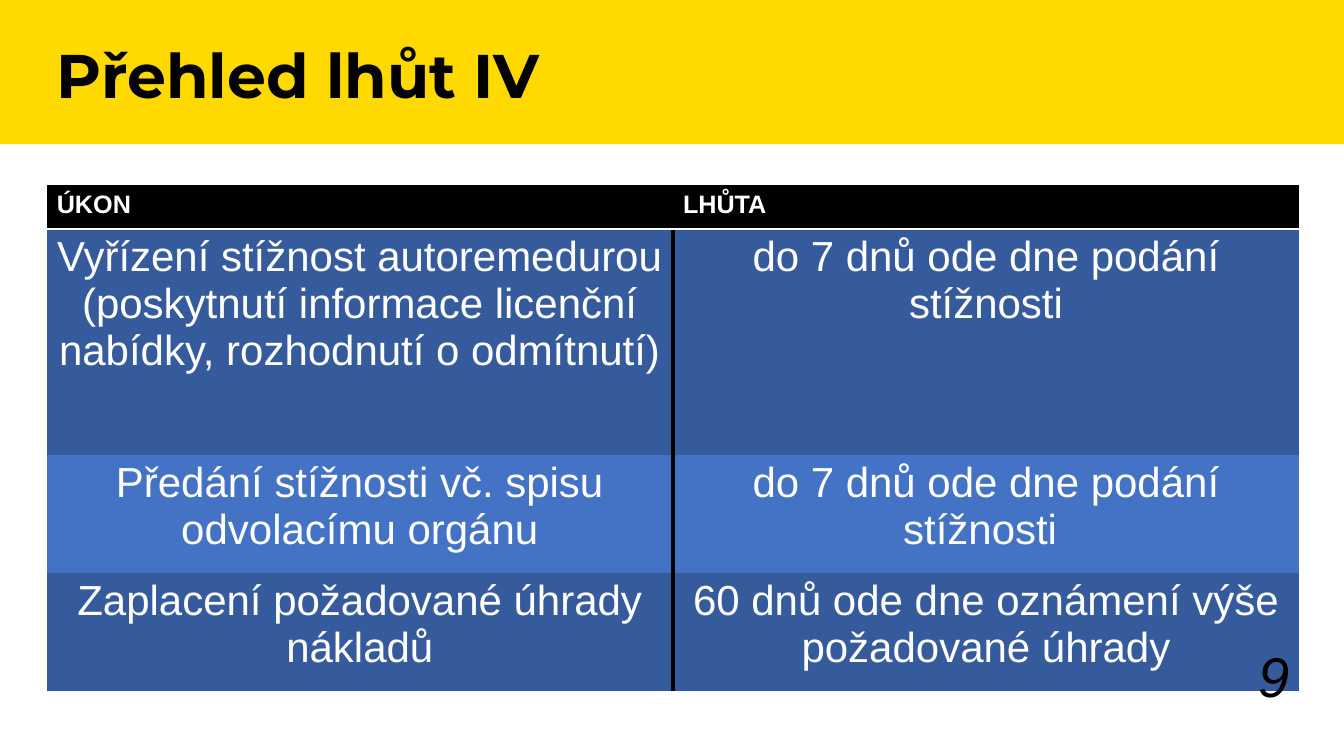
from lxml.etree import SubElement
from pptx import Presentation
from pptx.dml.color import RGBColor
from pptx.enum.shapes import MSO_SHAPE as Shape
from pptx.enum.text import MSO_ANCHOR as Anchor, PP_ALIGN as Align
from pptx.oxml import parse_xml
from pptx.oxml.ns import nsdecls, qn
from pptx.util import Pt

# Content
TITLE = "Přehled lhůt IV"
PAGE = "9"
DEADLINES = [
    ("ÚKON", "LHŮTA"),
    ("Vyřízení stížnost autoremedurou (poskytnutí informace licenční "
     "nabídky, rozhodnutí o odmítnutí)", "do 7 dnů ode dne podání stížnosti"),
    ("Předání stížnosti vč. spisu odvolacímu orgánu",
     "do 7 dnů ode dne podání stížnosti "),
    ("Zaplacení požadované úhrady nákladů",
     "60 dnů ode dne oznámení výše požadované úhrady"),
]

# Look
COLORS = {"band": "FFD900", "black": "000000", "white": "FFFFFF",
          "dark": "365B9D", "light": "4472C4"}
ROW_FILLS = ["black", "dark", "light", "dark"]
ROW_HEIGHTS = [31.2, 161.3, 84.3, 84.3]
NO_STYLE = "{2D5ABB26-0587-4C30-8999-92F81FD0307C}"
WIDTH, HEIGHT = 960, 540
LEFT, TABLE_TOP, TABLE_WIDTH = 33.4, 132.3, 894.6


def rgb(name):
    return RGBColor.from_string(COLORS[name])


def set_font(paragraph, face, size, color, bold=False, italic=False):
    font = paragraph.font
    font.name, font.size = face, Pt(size)
    font.bold, font.italic = bold, italic
    font.color.rgb = rgb(color)


def cell_borders(row, column):
    """Borders in schema order: left, right, bottom."""
    if column and row:
        yield "lnL", "black", 3
    if not column:
        yield "lnR", "black", 3
    if not row:
        yield "lnB", "white", 2


def add_border(cell, side, color, width):
    line = parse_xml(
        f'<a:{side} {nsdecls("a")} w="{Pt(width)}"><a:solidFill>'
        f'<a:srgbClr val="{COLORS[color]}"/></a:solidFill></a:{side}>')
    cell._tc.get_or_add_tcPr().append(line)


deck = Presentation()
deck.slide_width, deck.slide_height = Pt(WIDTH), Pt(HEIGHT)
slide = deck.slides.add_slide(deck.slide_layouts[5])

# Yellow band, behind the title
band = slide.shapes.add_shape(Shape.RECTANGLE, 0, 0, Pt(WIDTH), Pt(103))
band.shadow.inherit = False
band.fill.solid()
band.fill.fore_color.rgb = rgb("band")
band.line.fill.background()
slide.shapes._spTree.insert(2, band._element)

# Title
title = slide.shapes.title
title.left, title.top, title.width, title.height = map(Pt, (LEFT, 28.8, 887, 73.4))
title.text_frame.text = TITLE
title.text_frame.vertical_anchor = Anchor.TOP
heading = title.text_frame.paragraphs[0]
heading.alignment, heading.line_spacing = Align.LEFT, 0.9
set_font(heading, "Montserrat", 44, "black", bold=True)

# Table of deadlines
table = slide.shapes.add_table(
    len(DEADLINES), 2, Pt(LEFT), Pt(TABLE_TOP),
    Pt(TABLE_WIDTH), Pt(sum(ROW_HEIGHTS))).table
table._tbl.tblPr.find(qn("a:tableStyleId")).text = NO_STYLE
for row, texts in enumerate(DEADLINES):
    table.rows[row].height = Pt(ROW_HEIGHTS[row])
    for column, text in enumerate(texts):
        cell = table.cell(row, column)
        cell.text = text
        for border in cell_borders(row, column):
            add_border(cell, *border)
        cell.fill.solid()
        cell.fill.fore_color.rgb = rgb(ROW_FILLS[row])
        entry = cell.text_frame.paragraphs[0]
        entry.alignment = Align.CENTER if row else Align.LEFT
        set_font(entry, "Arial", 30 if row else 18, "white", bold=not row)

# Page number
number = slide.shapes.add_textbox(Pt(712), Pt(468.7), Pt(216), Pt(41)).text_frame
number.word_wrap = True
number.vertical_anchor = Anchor.BOTTOM
number.text = PAGE
number.paragraphs[0].alignment = Align.RIGHT
set_font(number.paragraphs[0], "Arial", 40, "black", italic=True)

deck.save("out.pptx")
